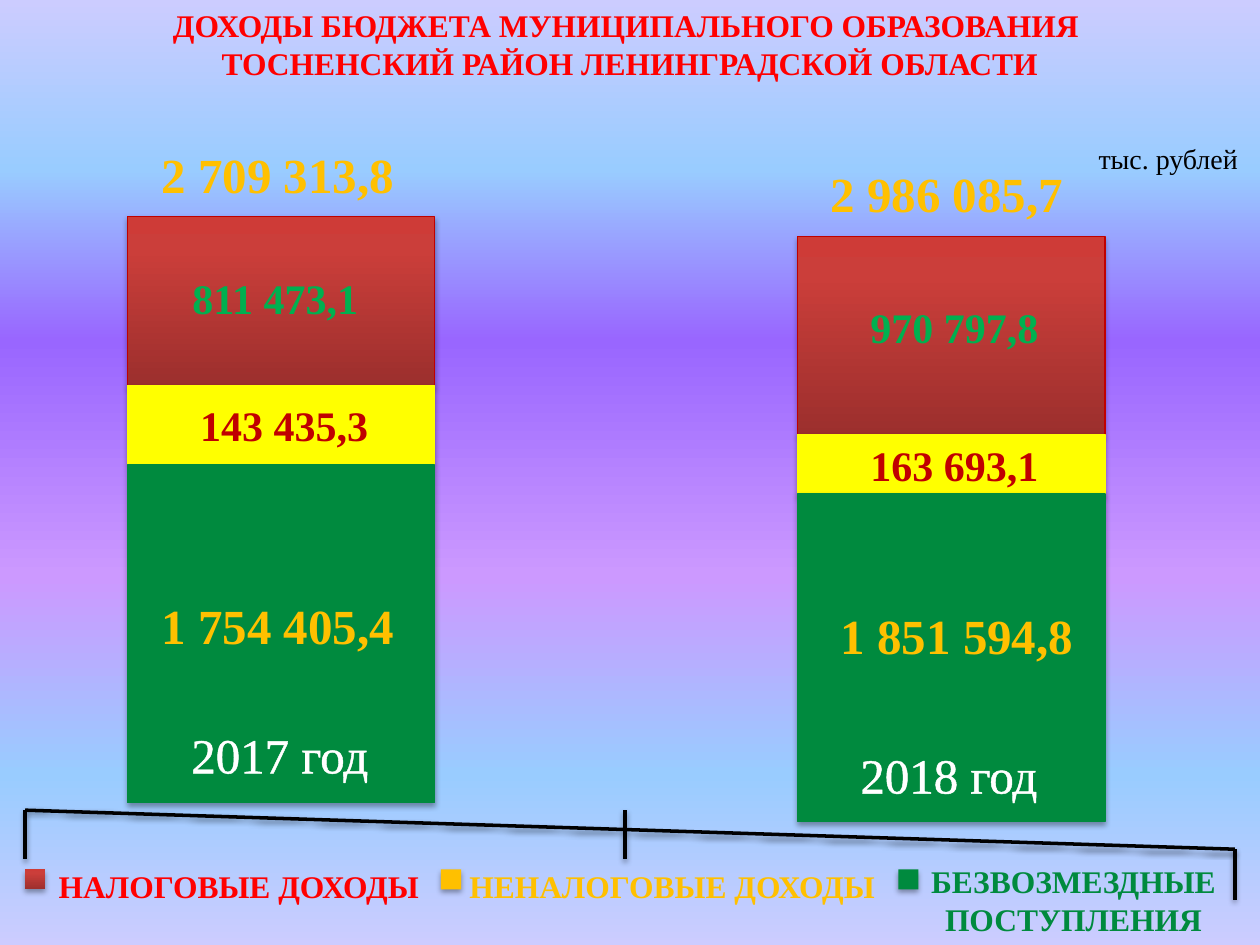
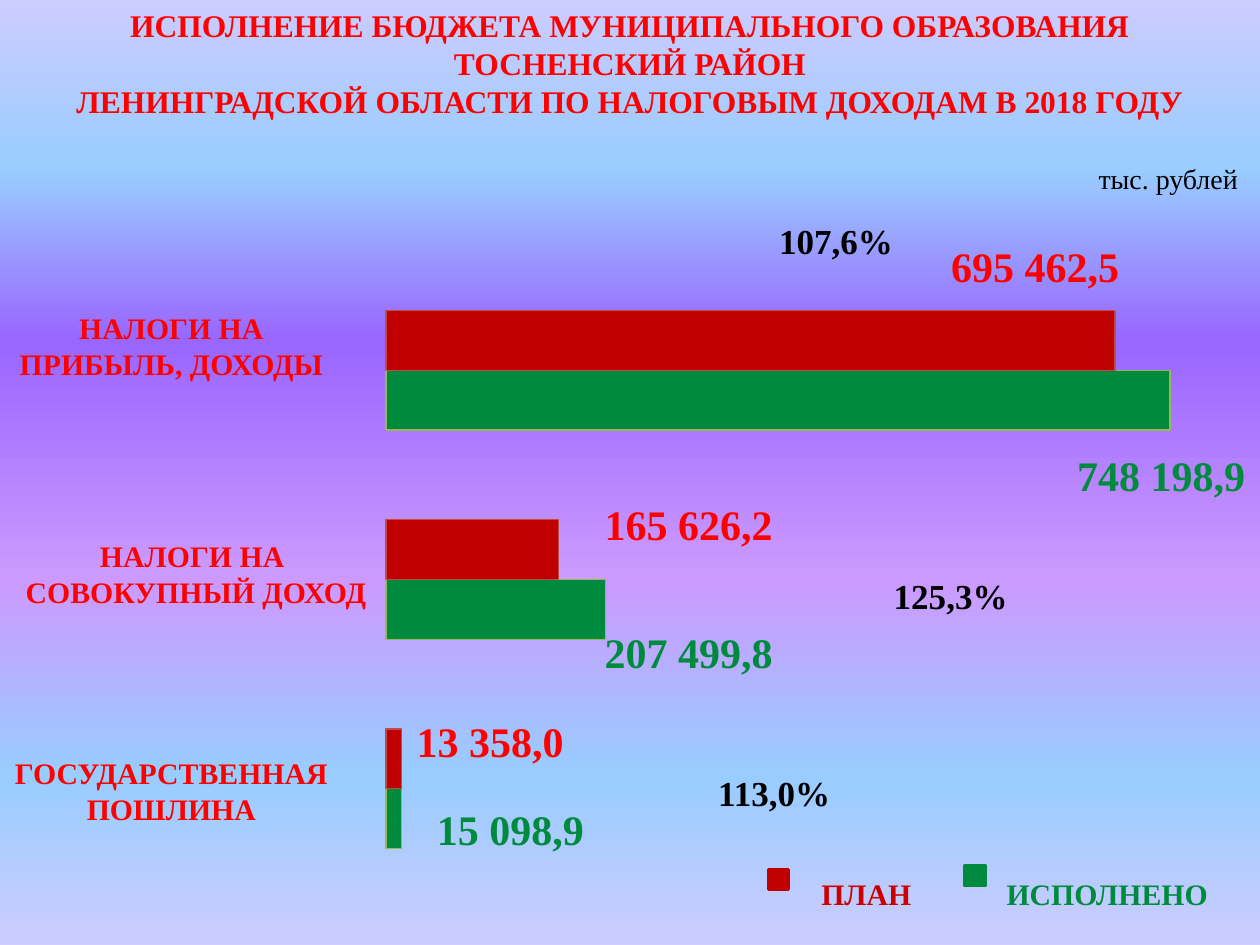
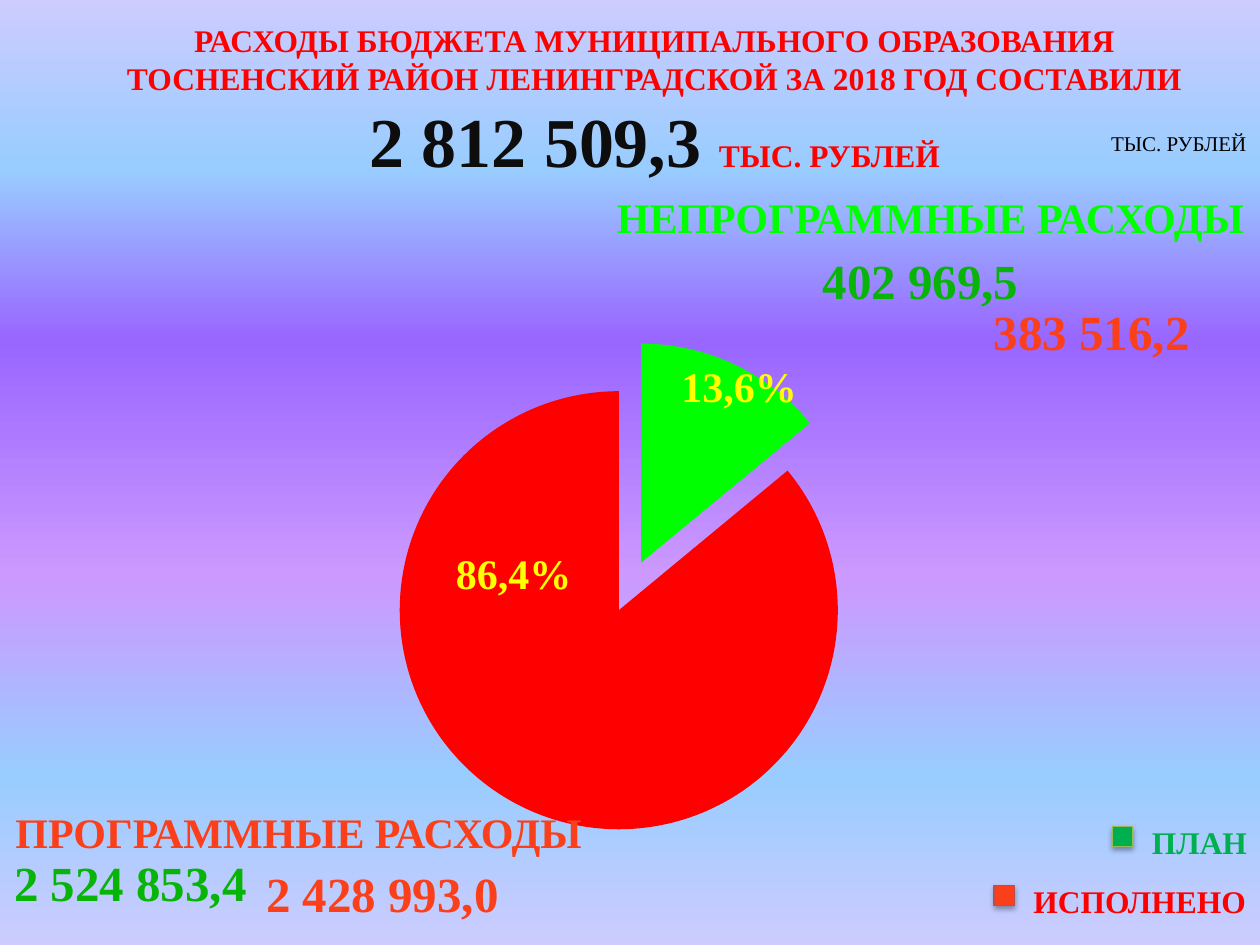
"""Build three budget slides: revenue, tax revenue execution and expenditure."""
from dataclasses import dataclass
from typing import Union

from lxml.etree import SubElement
from pptx import Presentation
from pptx.chart.data import CategoryChartData
from pptx.dml.color import RGBColor
from pptx.enum.chart import XL_CHART_TYPE
from pptx.enum.shapes import MSO_CONNECTOR, MSO_SHAPE
from pptx.enum.text import MSO_ANCHOR, MSO_AUTO_SIZE, PP_ALIGN
from pptx.oxml.ns import qn
from pptx.util import Inches, Pt

FONT = "Times New Roman"
BLACK, WHITE, YELLOW, GOLD = "000000", "FFFFFF", "FFFF00", "FFC000"
RED, DARK_RED, ORANGE_RED = "FF0000", "C00000", "FA3F1A"
GREEN, LIGHT_GREEN, LIME, PLAN_GREEN = "008A3E", "00B050", "00FF00", "08B408"
VIOLET, GRAY, NAVY = "5E457C", "404040", "002060"
RED_EDGE, GREEN_EDGE = "BF4C48", "98B955"
BACKGROUND = ((0, "CCCCFF"), (18, "99CCFF"), (36, "9966FF"),
              (61, "CC99FF"), (82, "99CCFF"), (100, "CCCCFF"))
RED_GRADIENT = ((0, "9C2F2D"), (80, "CB3E3A"), (100, "CE3B37"))
SWATCH = 0.16
BAR_WIDTH = 2.44


@dataclass
class Label:
    text: str
    left: float
    top: float
    width: float
    size: float
    color: str
    outline: str = VIOLET
    outline_width: float = 0.71
    bold: bool = True
    align: PP_ALIGN = PP_ALIGN.CENTER
    wrap: bool = False
    lines: int = 1


@dataclass
class Block:
    left: float
    top: float
    fill: Union[str, tuple]
    line: str = ""
    line_width: float = 0.75
    width: float = SWATCH
    height: float = SWATCH
    shadow: bool = True


@dataclass
class Column:
    left: float
    top: float
    heights: tuple


def rgb(color: str) -> RGBColor:
    """Turn a hex string into a colour."""
    return RGBColor.from_string(color)


def set_gradient(owner, fill, stops: tuple, angle: float) -> None:
    """Fill with a linear gradient, the angle counted counter-clockwise."""
    fill.gradient()
    fill.gradient_angle = angle
    stop_list = next(owner.element.iter(qn("a:gsLst")))
    for old_stop in list(stop_list):
        stop_list.remove(old_stop)
    for position, color in stops:
        stop = SubElement(stop_list, qn("a:gs"), pos=str(position * 1000))
        SubElement(stop, qn("a:srgbClr"), val=color)


def add_effects(shape, opacity: int = 0, distance: float = 0) -> None:
    """Replace the theme shadow by a soft one, or by none at zero opacity."""
    effects = SubElement(shape.element.spPr, qn("a:effectLst"))
    if opacity:
        shadow = SubElement(effects, qn("a:outerShdw"), blurRad=str(Pt(3.1)),
                            dist=str(Pt(distance)), dir="5400000", rotWithShape="0")
        color = SubElement(shadow, qn("a:srgbClr"), val=BLACK)
        SubElement(color, qn("a:alpha"), val=str(opacity * 1000))


def format_span(span, size: float, color: str, bold: bool = True,
                outline: str = VIOLET, outline_width: float = 0.71) -> None:
    """Set the font, colour and letter outline of a run."""
    span.font.name = FONT
    span.font.size = Pt(size)
    span.font.bold = bold
    span.font.color.rgb = rgb(color)
    if outline:
        properties = span.font._element
        line = SubElement(properties, qn("a:ln"), w=str(Pt(outline_width)))
        properties.insert(0, line)
        SubElement(SubElement(line, qn("a:solidFill")), qn("a:srgbClr"), val=outline)


def add_label(page, label: Label) -> None:
    """Add a text box whose height follows from its size and line count."""
    height = label.size * 1.2 / 72 * label.lines + 0.1
    box = page.shapes.add_textbox(Inches(label.left), Inches(label.top),
                                  Inches(label.width), Inches(height))
    frame = box.text_frame
    frame.text = label.text
    frame.word_wrap = label.wrap
    frame.auto_size = MSO_AUTO_SIZE.SHAPE_TO_FIT_TEXT
    for para in frame.paragraphs:
        para.alignment = label.align
        for span in para.runs:
            format_span(span, label.size, label.color, label.bold,
                        label.outline, label.outline_width)


def add_block(page, block: Block) -> None:
    """Add a rectangle with a plain or gradient fill."""
    shape = page.shapes.add_shape(MSO_SHAPE.RECTANGLE, Inches(block.left), Inches(block.top),
                                  Inches(block.width), Inches(block.height))
    if isinstance(block.fill, str):
        shape.fill.solid()
        shape.fill.fore_color.rgb = rgb(block.fill)
    else:
        set_gradient(shape, shape.fill, block.fill, 90)
    if block.line:
        shape.line.color.rgb = rgb(block.line)
        shape.line.width = Pt(block.line_width)
    else:
        shape.line.fill.background()
    add_effects(shape, 35 if block.shadow else 0, 1.8)


def add_column(page, column: Column) -> None:
    """Stack the three revenue segments from top to bottom."""
    top = column.top
    styles = ((RED_GRADIENT, DARK_RED), (YELLOW, YELLOW), (GREEN, GREEN))
    for height, (fill, line) in zip(column.heights, styles):
        add_block(page, Block(column.left, top, fill, line, width=BAR_WIDTH, height=height))
        top += height


def add_axis_line(page, start: tuple, end: tuple) -> None:
    """Add one black line of the time axis."""
    line = page.shapes.add_connector(MSO_CONNECTOR.STRAIGHT, Inches(start[0]),
                                     Inches(start[1]), Inches(end[0]), Inches(end[1]))
    line.line.color.rgb = rgb(BLACK)
    line.line.width = Pt(2)
    add_effects(line, 38, 1.6)


def add_page(deck, title: str, left: float = 0, top: float = 0, width: float = 10,
             height: float = 0.71, outline: str = VIOLET):
    """Add a slide with its red centred title."""
    page = deck.slides.add_slide(deck.slide_layouts[5])
    box = page.shapes.title
    box.left, box.top = Inches(left), Inches(top)
    box.width, box.height = Inches(width), Inches(height)
    frame = box.text_frame
    frame.text = title
    frame.word_wrap = True
    frame.vertical_anchor = MSO_ANCHOR.TOP
    frame.auto_size = MSO_AUTO_SIZE.SHAPE_TO_FIT_TEXT
    for para in frame.paragraphs:
        para.alignment = PP_ALIGN.CENTER
        for span in para.runs:
            format_span(span, 18, RED, outline=outline)
    return page


def add_unit(page, top: float) -> None:
    """Add the note on the unit of measure."""
    add_label(page, Label("тыс. рублей", 8.62, top, 1.38, 16, BLACK, outline="",
                          bold=False, align=PP_ALIGN.LEFT, wrap=True))


def add_chart(page, kind, place: tuple, categories: tuple, series: dict):
    """Add a chart without title and legend."""
    data = CategoryChartData()
    data.categories = categories
    for name, values in series.items():
        data.add_series(name, values)
    chart = page.shapes.add_chart(kind, *map(Inches, place), data).chart
    chart.has_title = False
    chart.has_legend = False
    chart.font.name = "Calibri"
    chart.font.size = Pt(18)
    chart.font.color.rgb = rgb(BLACK)
    return chart


def build_revenue(deck) -> None:
    """Build the slide with the revenue of two years."""
    page = add_page(deck, "ДОХОДЫ БЮДЖЕТА МУНИЦИПАЛЬНОГО ОБРАЗОВАНИЯ \n"
                    "ТОСНЕНСКИЙ РАЙОН ЛЕНИНГРАДСКОЙ ОБЛАСТИ", outline=NAVY)
    add_column(page, Column(6.33, 1.88, (1.57, 0.47, 2.6)))
    add_unit(page, 1.07)
    for start, end in (((0.2, 6.43), (0.2, 6.82)), ((0.2, 6.43), (9.8, 6.74)),
                       ((9.8, 6.74), (9.8, 7.14)), ((4.96, 6.43), (4.96, 6.82))):
        add_axis_line(page, start, end)
    add_column(page, Column(1.01, 1.72, (1.34, 0.63, 2.68)))
    for left, fill in ((0.2, RED_GRADIENT), (7.13, GREEN), (3.5, GOLD)):
        add_block(page, Block(left, 6.9, fill))
    for label in (
        Label("НАЛОГОВЫЕ ДОХОДЫ", 0.35, 6.83, 3.09, 18, RED),
        Label("НЕНАЛОГОВЫЕ ДОХОДЫ", 3.58, 6.83, 3.51, 18, GOLD),
        Label("БЕЗВОЗМЕЗДНЫЕ\nПОСТУПЛЕНИЯ", 7.28, 6.79, 2.48, 18, GREEN, lines=2),
        Label("2 709 313,8", 1.17, 1.1, 2.07, 28, GOLD, GRAY),
        Label("2 986 085,7", 6.48, 1.25, 2.07, 28, GOLD, GRAY),
        Label("1 754 405,4", 1.17, 4.68, 2.07, 28, GOLD, GRAY),
        Label("1 851 594,8", 6.56, 4.76, 2.07, 28, GOLD, GRAY),
        Label("143 435,3", 1.48, 3.12, 1.55, 24, DARK_RED, GRAY),
        Label("163 693,1", 6.8, 3.44, 1.55, 24, DARK_RED, GRAY),
        Label("811 473,1", 1.41, 2.11, 1.55, 24, LIGHT_GREEN, WHITE),
        Label("970 797,8", 6.8, 2.34, 1.55, 24, LIGHT_GREEN, WHITE),
        Label("2017 год", 1.41, 5.7, 1.62, 28, WHITE, WHITE, 1.45, False),
        Label("2018 год", 6.72, 5.86, 1.62, 28, WHITE, WHITE, 1.45, False),
    ):
        add_label(page, label)


def add_tax_chart(page) -> None:
    """Add the bars that compare plan and execution."""
    chart = add_chart(page, XL_CHART_TYPE.BAR_CLUSTERED, (3.05, 1.86, 6.95, 5.29),
                      ("1", "2", "3"),
                      {"Series 1": (2, 28, 100), "Series 2": (2, 22, 93)})
    plot = chart.plots[0]
    plot.gap_width = 150
    plot.overlap = 0
    plot.vary_by_categories = False
    chart.value_axis.minimum_scale = 0
    chart.value_axis.maximum_scale = 107
    chart.value_axis.has_major_gridlines = False
    chart.value_axis.visible = False
    chart.category_axis.visible = False
    for series, (fill, line) in zip(plot.series, ((GREEN, GREEN_EDGE), (DARK_RED, RED_EDGE))):
        series.format.fill.solid()
        series.format.fill.fore_color.rgb = rgb(fill)
        series.format.line.color.rgb = rgb(line)
        series.format.line.width = Pt(0.75)
    plot_area = next(chart.element.iter(qn("c:plotArea")))
    for old_layout in plot_area.findall(qn("c:layout")):
        plot_area.remove(old_layout)
    layout = SubElement(plot_area, qn("c:layout"))
    plot_area.insert(0, layout)
    manual = SubElement(layout, qn("c:manualLayout"))
    for tag, value in (("layoutTarget", "inner"), ("xMode", "edge"), ("yMode", "edge"),
                       ("x", "0.002"), ("y", "0.047"), ("w", "0.958"), ("h", "0.942")):
        SubElement(manual, qn(f"c:{tag}"), val=value)


def build_taxes(deck) -> None:
    """Build the slide with the execution of tax revenue."""
    page = add_page(deck, "ИСПОЛНЕНИЕ БЮДЖЕТА МУНИЦИПАЛЬНОГО ОБРАЗОВАНИЯ ТОСНЕНСКИЙ РАЙОН\n"
                    "ЛЕНИНГРАДСКОЙ ОБЛАСТИ ПО НАЛОГОВЫМ ДОХОДАМ В 2018 ГОДУ", height=1.01)
    add_tax_chart(page)
    for text, top, width in (("НАЛОГИ НА ПРИБЫЛЬ, ДОХОДЫ", 2.41, 2.72),
                             ("НАЛОГИ НА \nСОВОКУПНЫЙ ДОХОД", 4.22, 3.11),
                             ("ГОСУДАРСТВЕННАЯ ПОШЛИНА", 5.94, 2.72)):
        add_label(page, Label(text, 0, top, width, 17, RED, wrap=True, lines=2))
    for text, left, top, width, color in (
        ("13 358,0", 3.2, 5.63, 1.38, RED), ("15 098,9", 3.36, 6.33, 1.38, GREEN),
        ("165 626,2", 4.69, 3.91, 1.55, RED), ("207 499,8", 4.69, 4.92, 1.55, GREEN),
        ("695 462,5", 7.44, 1.86, 1.55, RED), ("748 198,9", 8.44, 3.52, 1.55, GREEN),
    ):
        add_label(page, Label(text, left, top, width, 24, color))
    for left, top, color in ((7.66, 6.87, GREEN), (6.1, 6.9, DARK_RED)):
        add_block(page, Block(left, top, color, color, 2, shadow=False))
    for text, left, width, color in (("ПЛАН", 6.42, 1.81, "CC0000"),
                                     ("ИСПОЛНЕНО", 7.89, 2.11, GREEN)):
        add_label(page, Label(text, left, 6.9, width, 17, color,
                              align=PP_ALIGN.LEFT, wrap=True))
    for text, left, top in (("125,3%", 6.99, 4.51), ("113,0%", 5.59, 6.07),
                            ("107,6%", 6.08, 1.69)):
        add_label(page, Label(text, left, top, 1.11, 20, BLACK, BLACK))
    add_unit(page, 1.23)


def add_expenditure_chart(page) -> None:
    """Add the exploded pie of the two kinds of expenditure."""
    chart = add_chart(page, XL_CHART_TYPE.PIE, (0, 2.57, 10, 4.17), ("1", "2"),
                      {"Series 1": (14, 86)})
    series = chart.plots[0].series[0]
    for index, color in enumerate((LIME, RED)):
        fill = series.points[index].format.fill
        fill.solid()
        fill.fore_color.rgb = rgb(color)
    element = next(chart.element.iter(qn("c:ser")))
    explosion = SubElement(element, qn("c:explosion"), val="12")
    element.find(qn("c:dPt")).addprevious(explosion)


def build_expenditure(deck) -> None:
    """Build the slide with the expenditure of the year."""
    page = add_page(deck, "РАСХОДЫ БЮДЖЕТА МУНИЦИПАЛЬНОГО ОБРАЗОВАНИЯ ТОСНЕНСКИЙ РАЙОН "
                    "ЛЕНИНГРАДСКОЙ ЗА 2018 ГОД СОСТАВИЛИ", 0.59, 0.12, 9.21, 1.38)
    para = page.shapes.title.text_frame.add_paragraph()
    para.alignment = PP_ALIGN.CENTER
    for text, size, color, outline in (("2 812 509,3 ", 40, "0D0D0D", BLACK),
                                       ("ТЫС. РУБЛЕЙ", 18, RED, VIOLET)):
        span = para.add_run()
        span.text = text
        format_span(span, size, color, outline=outline)
    add_expenditure_chart(page)
    add_block(page, Block(7.89, 7.03, ORANGE_RED, RED_EDGE))
    add_block(page, Block(8.83, 6.56, LIGHT_GREEN, GREEN_EDGE))
    for label in (
        Label("ИСПОЛНЕНО", 8.09, 6.95, 1.91, 18, RED, DARK_RED),
        Label("ПЛАН", 9.04, 6.48, 0.96, 18, LIGHT_GREEN, GREEN),
        Label("НЕПРОГРАММНЫЕ РАСХОДЫ", 4.77, 1.47, 5.23, 24, LIME, BLACK),
        Label("ПРОГРАММНЫЕ РАСХОДЫ", 0, 6.35, 4.74, 24, ORANGE_RED, BLACK),
        Label("2 524 853,4", 0, 6.72, 2.07, 28, PLAN_GREEN, BLACK),
        Label("2 428 993,0", 2, 6.8, 2.07, 28, ORANGE_RED, BLACK),
        Label("402 969,5", 6.42, 1.94, 1.77, 28, PLAN_GREEN, BLACK),
        Label("383 516,2", 7.78, 2.34, 1.77, 28, ORANGE_RED, BLACK),
        Label("ТЫС. РУБЛЕЙ", 8.71, 0.99, 1.29, 12, BLACK, BLACK, bold=False),
        Label("13,6%", 5.31, 2.81, 1.13, 24, YELLOW, align=PP_ALIGN.LEFT),
        Label("86,4%", 3.52, 4.3, 1.13, 24, YELLOW, align=PP_ALIGN.LEFT),
    ):
        add_label(page, label)


def main() -> None:
    """Build and save the deck."""
    deck = Presentation()
    deck.slide_width, deck.slide_height = Inches(10), Inches(7.5)
    master = deck.slide_master
    set_gradient(master, master.background.fill, BACKGROUND, 270)
    build_revenue(deck)
    build_taxes(deck)
    build_expenditure(deck)
    deck.save("out.pptx")


if __name__ == "__main__":
    main()
